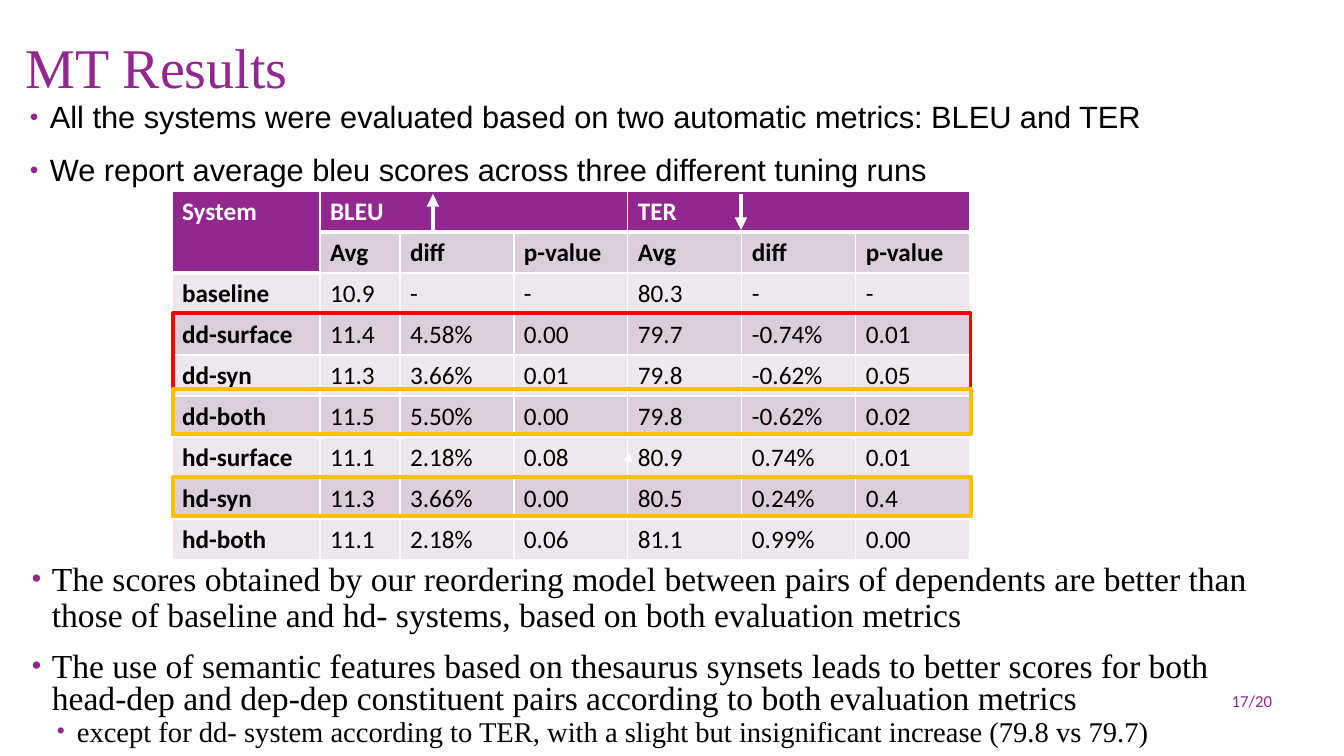
from lxml.etree import SubElement
from pptx import Presentation
from pptx.dml.color import RGBColor
from pptx.enum.shapes import MSO_CONNECTOR, MSO_SHAPE
from pptx.enum.text import MSO_ANCHOR, PP_ALIGN
from pptx.oxml.ns import qn
from pptx.util import Pt

EMU_PER_PX = 914400 / 100.8
PURPLE, BLACK, WHITE = "92278F", "000000", "FFFFFF"
RED, GOLD = "FF0000", "FFC000"
BANDS = ("DCCDDB", "EEE8EE")
SERIF, SANS, TABLE_FONT = "Times New Roman", "Arial", "Calibri"

# Each box: left, top, width, height, anchor, paragraphs
TITLE = (16, 8, 1269, 125, MSO_ANCHOR.MIDDLE, [
    dict(text="MT Results", font=SERIF, size=40, color=PURPLE, spacing=0.9)])
PAGE_NUMBER = (1094, 681, 188, 40, MSO_ANCHOR.MIDDLE, [
    dict(text="17/20", font=TABLE_FONT, size=12, color=PURPLE, align=PP_ALIGN.RIGHT)])
METRICS = (15, 97, 1270, 135, MSO_ANCHOR.TOP, [
    dict(text=text, font=SANS, size=22, spacing=0.9, before=14, indent=25)
    for text in (
        "All the systems were evaluated based on two automatic metrics: BLEU and TER",
        "We report average bleu scores across three different tuning runs")])
REORDERING = (17, 557, 1270, 118, MSO_ANCHOR.TOP, [
    dict(text="The scores obtained by our reordering model between pairs of dependents are "
              "better than those of baseline and hd- systems, based on both evaluation metrics",
         font=SERIF, size=24, spacing=0.9, before=14, indent=25)])
SEMANTICS = (17, 648, 1270, 115, MSO_ANCHOR.TOP, [
    dict(text="The use of semantic features based on thesaurus synsets leads to better scores for "
              "both head-dep and dep-dep constituent pairs according to both evaluation metrics",
         font=SERIF, size=24, spacing=0.8, before=14, indent=25),
    dict(text="except for dd- system according to TER, with a slight but insignificant increase "
              "(79.8 vs 79.7)",
         font=SERIF, size=20.4, spacing=0.8, before=2, after=4, indent=50, level=1)])

RESULTS = [
    ("System", "BLEU", "", "", "TER", "", ""),
    ("", "Avg", "diff", "p-value", "Avg", "diff", "p-value"),
    ("baseline", "10.9", "-", "-", "80.3", "-", "-"),
    ("dd-surface", "11.4", "4.58%", "0.00", "79.7", "-0.74%", "0.01"),
    ("dd-syn", "11.3", "3.66%", "0.01", "79.8", "-0.62%", "0.05"),
    ("dd-both", "11.5", "5.50%", "0.00", "79.8", "-0.62%", "0.02"),
    ("hd-surface", "11.1", "2.18%", "0.08", "80.9", "0.74%", "0.01"),
    ("hd-syn", "11.3", "3.66%", "0.00", "80.5", "0.24%", "0.4"),
    ("hd-both", "11.1", "2.18%", "0.06", "81.1", "0.99%", "0.00"),
]
MERGES = [((0, 0), (1, 0)), ((0, 1), (0, 3)), ((0, 4), (0, 6))]
TABLE_LEFT, TABLE_TOP, ROW_HEIGHT = 172, 191, 41
COLUMN_WIDTHS = [148, 80] + [114] * 5

# Each frame: top, height, colour, line width
FRAME_LEFT, FRAME_WIDTH = 173, 798
FRAMES = [(313, 122, RED, 2.25), (389, 45, GOLD, 3), (477, 39, GOLD, 3)]
# Each arrow: start x, start y, end x, end y, line width
ARROWS = [(627, 468, 630, 453, 0.75), (433, 231, 433, 194, 3), (741, 194, 741, 230, 3)]


def px(*lengths):
    """Turn pixel lengths into EMU."""
    return [round(length * EMU_PER_PX) for length in lengths]


def rgb(color):
    return RGBColor.from_string(color)


def set_font(font, name, size, color, bold=False):
    for key, value in dict(name=name, size=Pt(size), bold=bold).items():
        setattr(font, key, value)
    font.color.rgb = rgb(color)


def add_bullet(paragraph, indent):
    properties = paragraph._p.get_or_add_pPr()
    margin, hanging = px(indent, -20)
    properties.set("marL", str(margin))
    properties.set("indent", str(hanging))
    color = SubElement(properties, qn("a:buClr"))
    SubElement(color, qn("a:srgbClr"), val=PURPLE)
    SubElement(properties, qn("a:buSzPct"), val="80000")
    SubElement(properties, qn("a:buFont"), typeface=SANS)
    SubElement(properties, qn("a:buChar"), char="•")


def add_text(slide, left, top, width, height, anchor, paragraphs):
    frame = slide.shapes.add_textbox(*px(left, top, width, height)).text_frame
    frame.word_wrap = True
    frame.vertical_anchor = anchor
    for index, item in enumerate(paragraphs):
        paragraph = frame.add_paragraph() if index else frame.paragraphs[0]
        formats = dict(line_spacing=item.get("spacing", 1), level=item.get("level", 0),
                       space_before=Pt(item.get("before", 0)),
                       space_after=Pt(item.get("after", 0)),
                       alignment=item.get("align", PP_ALIGN.LEFT))
        for key, value in formats.items():
            setattr(paragraph, key, value)
        if "indent" in item:
            add_bullet(paragraph, item["indent"])
        run = paragraph.add_run()
        run.text = item["text"]
        set_font(run.font, item["font"], item["size"], item.get("color", BLACK))


def add_borders(cell, bottom_width):
    properties = cell._tc.get_or_add_tcPr()
    for side, width in dict(lnL=1, lnR=1, lnT=1, lnB=bottom_width).items():
        line = SubElement(properties, qn(f"a:{side}"), w=str(Pt(width)))
        SubElement(SubElement(line, qn("a:solidFill")), qn("a:srgbClr"), val=WHITE)


def add_results(slide):
    size = sum(COLUMN_WIDTHS), ROW_HEIGHT * len(RESULTS)
    table = slide.shapes.add_table(len(RESULTS), len(COLUMN_WIDTHS),
                                   *px(TABLE_LEFT, TABLE_TOP, *size)).table
    table.first_row = table.horz_banding = False
    for column, width in zip(table.columns, px(*COLUMN_WIDTHS)):
        column.width = width
    for row_index, values in enumerate(RESULTS):
        table.rows[row_index].height = px(ROW_HEIGHT)[0]
        for column_index, value in enumerate(values):
            cell = table.cell(row_index, column_index)
            header = row_index == 0 or (row_index == 1 and column_index == 0)
            add_borders(cell, 3 if header else 1)
            cell.fill.solid()
            cell.fill.fore_color.rgb = rgb(PURPLE if header else BANDS[(row_index + 1) % 2])
            if value:
                run = cell.text_frame.paragraphs[0].add_run()
                run.text = value
                set_font(run.font, TABLE_FONT, 18, WHITE if header else BLACK,
                         bold=row_index < 2 or column_index == 0)
    for first, last in MERGES:
        table.cell(*first).merge(table.cell(*last))


def add_frame(slide, top, height, color, width):
    shape = slide.shapes.add_shape(MSO_SHAPE.RECTANGLE,
                                   *px(FRAME_LEFT, top, FRAME_WIDTH, height))
    shape.shadow.inherit = False
    shape.fill.background()
    shape.line.color.rgb = rgb(color)
    shape.line.width = Pt(width)


def add_arrow(slide, start_x, start_y, end_x, end_y, width):
    arrow = slide.shapes.add_connector(MSO_CONNECTOR.STRAIGHT,
                                       *px(start_x, start_y, end_x, end_y))
    arrow.line.color.rgb = rgb(WHITE)
    arrow.line.width = Pt(width)
    SubElement(arrow.line._get_or_add_ln(), qn("a:tailEnd"), type="triangle")
    SubElement(arrow._element.spPr, qn("a:effectLst"))


def main():
    presentation = Presentation()
    presentation.slide_width, presentation.slide_height = px(1344, 756)
    slide = presentation.slides.add_slide(presentation.slide_layouts[6])
    for box in (TITLE, METRICS, PAGE_NUMBER, REORDERING, SEMANTICS):
        add_text(slide, *box)
    add_results(slide)
    for frame in FRAMES:
        add_frame(slide, *frame)
    for arrow in ARROWS:
        add_arrow(slide, *arrow)
    presentation.save("out.pptx")


if __name__ == "__main__":
    main()
